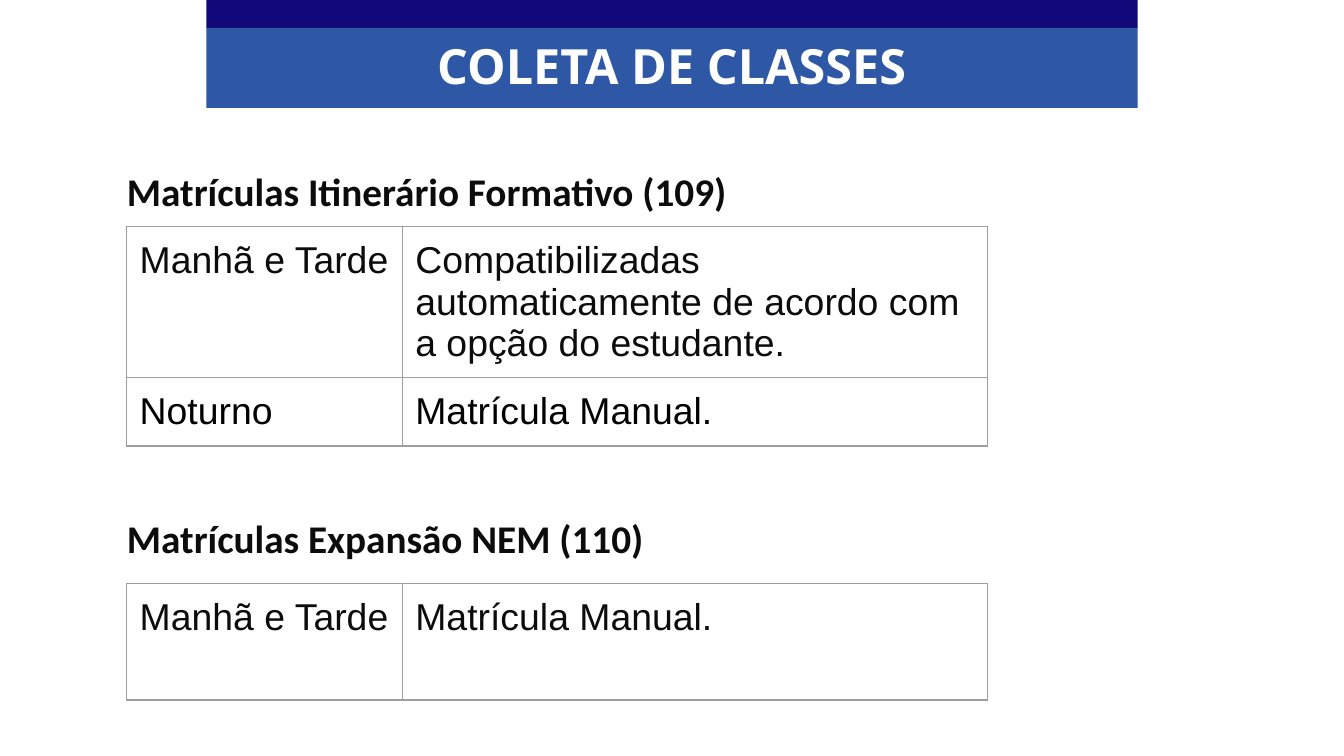
from lxml import etree
from pptx import Presentation
from pptx.dml.color import RGBColor
from pptx.enum.shapes import MSO_SHAPE
from pptx.enum.text import MSO_ANCHOR, PP_ALIGN
from pptx.oxml.ns import qn
from pptx.util import Cm, Pt

RECTANGLE = MSO_SHAPE.RECTANGLE
TOP = MSO_ANCHOR.TOP
LEFT, CENTER = PP_ALIGN.LEFT, PP_ALIGN.CENTER

NAVY = RGBColor(0x11, 0x09, 0x79)
BLUE = RGBColor(0x2E, 0x58, 0xA6)
WHITE = RGBColor(0xFF, 0xFF, 0xFF)
INK = RGBColor(0x0C, 0x0C, 0x0C)
BLACK = RGBColor(0x00, 0x00, 0x00)
GRAY = RGBColor(0x9E, 0x9E, 0x9E)

TITLE = "COLETA DE CLASSES"
# Each section: heading, heading top, table top, rows of (height, colour, cells)
SECTIONS = [
    ("Matrículas Itinerário Formativo (109)", 2.92, 4.28, [
        (2.2, INK, ("Manhã e Tarde",
                    "Compatibilizadas automaticamente de acordo com a opção do estudante.")),
        (0.8, BLACK, ("Noturno", "Matrícula Manual.")),
    ]),
    ("Matrículas Expansão NEM (110)", 9.48, 11.03, [
        (2.2, INK, ("Manhã e Tarde", "Matrícula Manual.")),
    ]),
]
BANDS = [(0.53, NAVY), (1.51, BLUE)]  # height, colour; stacked from the top

BAND_LEFT, BAND_WIDTH = 3.9, 17.6
HEADING_LEFT, HEADING_WIDTH, HEADING_HEIGHT = 2.15, 18.34, 1.42
TABLE_LEFT, COLUMN_WIDTHS = 2.39, (5.21, 11.07)
INSET = 0.25


def write(frame, text, font, size, color, bold=False, align=LEFT):
    frame.text = text
    para = frame.paragraphs[0]
    para.alignment = align
    for span in para.runs:
        span.font.name = font
        span.font.size = Pt(size)
        span.font.bold = bold
        span.font.color.rgb = color


def add_text(page, place, inset_y, *style, **options):
    box = page.shapes.add_textbox(*map(Cm, place))
    frame = box.text_frame
    frame.word_wrap = True
    frame.vertical_anchor = TOP
    frame.margin_left = frame.margin_right = Cm(INSET)
    frame.margin_top = frame.margin_bottom = Cm(inset_y)
    write(frame, *style, **options)


def add_borders(cell):
    properties = cell._tc.get_or_add_tcPr()
    for side in ("a:lnL", "a:lnR", "a:lnT", "a:lnB"):
        line = etree.SubElement(properties, qn(side), w=str(Pt(0.75)))
        fill = etree.SubElement(line, qn("a:solidFill"))
        etree.SubElement(fill, qn("a:srgbClr"), val=str(GRAY))


def add_grid(page, top, rows):
    height = sum(row[0] for row in rows)
    table = page.shapes.add_table(
        len(rows), len(COLUMN_WIDTHS), Cm(TABLE_LEFT), Cm(top),
        Cm(sum(COLUMN_WIDTHS)), Cm(height)).table
    table.first_row = table.horz_banding = False
    for column, width in zip(table.columns, COLUMN_WIDTHS):
        column.width = Cm(width)
    for row, (row_height, color, texts) in zip(table.rows, rows):
        row.height = Cm(row_height)
        for cell, text in zip(row.cells, texts):
            write(cell.text_frame, text, "Arial", 20, color)
            cell.margin_left = cell.margin_right = Cm(INSET)
            cell.margin_top = cell.margin_bottom = Cm(INSET)
            cell.vertical_anchor = TOP
            add_borders(cell)
            cell.fill.background()


def main():
    deck = Presentation()
    deck.slide_width, deck.slide_height = Cm(25.4), Cm(14.29)
    page = deck.slides.add_slide(deck.slide_layouts[6])

    for heading, heading_top, table_top, rows in SECTIONS:
        add_grid(page, table_top, rows)
        add_text(page, (HEADING_LEFT, heading_top, HEADING_WIDTH, HEADING_HEIGHT),
                 INSET, heading, "Calibri", 21, INK, bold=True)

    top = 0
    for height, color in BANDS:
        band = page.shapes.add_shape(
            RECTANGLE, Cm(BAND_LEFT), Cm(top), Cm(BAND_WIDTH), Cm(height))
        band.shadow.inherit = False
        band.fill.solid()
        band.fill.fore_color.rgb = color
        band.line.fill.background()
        top += height
    add_text(page, (BAND_LEFT, 0.56, BAND_WIDTH, 1.37), 0.13,
             TITLE, "Open Sans", 26, WHITE, bold=True, align=CENTER)

    deck.save("out.pptx")


if __name__ == "__main__":
    main()
